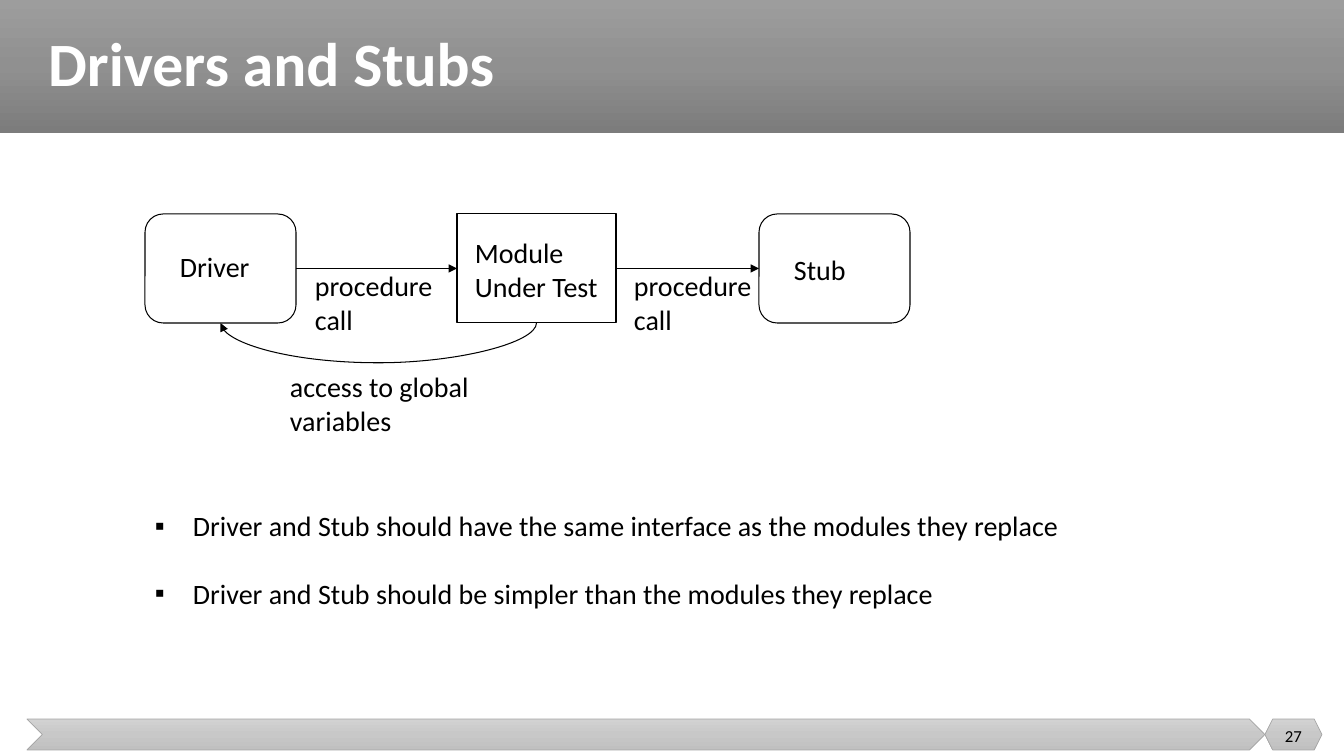
from dataclasses import dataclass

from lxml.etree import SubElement
from pptx import Presentation
from pptx.dml.color import RGBColor
from pptx.enum.shapes import MSO_CONNECTOR, MSO_SHAPE
from pptx.enum.text import MSO_ANCHOR, MSO_AUTO_SIZE, PP_ALIGN
from pptx.oxml.ns import qn
from pptx.util import Emu, Pt

EMU_PER_PX = 914400 / 100.8
BOTTOM, LEFT, RIGHT = 2, 1, 3


def px(length):
    return Emu(round(length * EMU_PER_PX))


@dataclass(frozen=True)
class Theme:
    font: str = "Calibri"
    ink: str = "000000"
    title_ink: str = "FFFFFF"
    band_edge: str = "A5A5A5"
    header: tuple = ("9D9D9D", "909090", "7C7C7C")
    footer: tuple = ("D2D2D2", "C8C8C8", "C0C0C0")
    title_size: int = 44
    body_size: int = 20
    number_size: int = 12
    line_width: float = 0.75
    edge_width: float = 0.5


class SlideBuilder:
    def __init__(self, slide, theme):
        self.slide = slide
        self.theme = theme

    def add_run(self, paragraph, text, size=None, color=None, bold=False):
        run = paragraph.add_run()
        run.text = text
        run.font.name = self.theme.font
        run.font.size = Pt(size or self.theme.body_size)
        run.font.bold = bold
        run.font.color.rgb = RGBColor.from_string(color or self.theme.ink)

    def title(self, text, left, top, width, height, behind):
        """Fill the title placeholder and stack it just above `behind`."""
        title = self.slide.shapes.title
        title.left, title.top = px(left), px(top)
        title.width, title.height = px(width), px(height)
        frame = title.text_frame
        frame.auto_size = MSO_AUTO_SIZE.NONE
        frame.vertical_anchor = MSO_ANCHOR.MIDDLE
        paragraph = frame.paragraphs[0]
        paragraph.alignment = PP_ALIGN.LEFT
        paragraph.line_spacing = 0.9
        self.add_run(paragraph, text, self.theme.title_size, self.theme.title_ink, True)
        behind.element.addnext(title.element)

    def shape(self, kind, left, top, width, height):
        shape = self.slide.shapes.add_shape(kind, px(left), px(top), px(width), px(height))
        shape.shadow.inherit = False
        return shape

    def band(self, kind, left, top, width, height, colors, edge=None):
        """Add a shape with an even vertical gradient."""
        band = self.shape(kind, left, top, width, height)
        band.fill.gradient()
        gradient = band.element.spPr.find(qn("a:gradFill"))
        stops = gradient.find(qn("a:gsLst"))
        for stop in list(stops):
            stops.remove(stop)
        for index, color in enumerate(colors):
            stop = SubElement(stops, qn("a:gs"), pos=str(index * 50000))
            SubElement(stop, qn("a:srgbClr"), val=color)
        gradient.find(qn("a:lin")).set("ang", "5400000")
        if edge:
            band.line.color.rgb = RGBColor.from_string(edge)
            band.line.width = Pt(self.theme.edge_width)
        else:
            band.line.fill.background()
        return band

    def box(self, kind, left, top, width, height):
        box = self.shape(kind, left, top, width, height)
        box.fill.background()
        box.line.color.rgb = RGBColor.from_string(self.theme.ink)
        box.line.width = Pt(self.theme.line_width)
        return box

    def text(self, lines, left, top, width, height, size=None):
        label = self.slide.shapes.add_textbox(px(left), px(top), px(width), px(height))
        frame = label.text_frame
        frame.word_wrap = True
        for index, line in enumerate(lines):
            paragraph = frame.add_paragraph() if index else frame.paragraphs[0]
            self.add_run(paragraph, line, size)
        return frame

    def bullets(self, items, left, top, width, height):
        frame = self.text(items, left, top, width, height)
        for index, paragraph in enumerate(frame.paragraphs):
            if index:
                paragraph.space_before = Pt(24)
            properties = paragraph._p.get_or_add_pPr()
            properties.set("marL", str(px(38)))
            properties.set("indent", str(-px(38)))
            color = SubElement(properties, qn("a:buClr"))
            SubElement(color, qn("a:srgbClr"), val=self.theme.ink)
            SubElement(properties, qn("a:buFont"), typeface="Arial")
            SubElement(properties, qn("a:buChar"), char="▪")

    def arrow(self, source, source_side, target, target_side, kind=MSO_CONNECTOR.STRAIGHT):
        arrow = self.slide.shapes.add_connector(kind, 0, 0, 0, 0)
        arrow.begin_connect(source, source_side)
        arrow.end_connect(target, target_side)
        arrow.line.color.rgb = RGBColor.from_string(self.theme.ink)
        arrow.line.width = Pt(self.theme.line_width)
        outline = arrow.element.spPr.find(qn("a:ln"))
        SubElement(outline, qn("a:tailEnd"), type="triangle")
        SubElement(arrow.element.spPr, qn("a:effectLst"))
        return arrow

    def return_arrow(self, source, target, depth):
        """Curve below both boxes, from bottom to bottom, running leftwards."""
        arrow = self.arrow(source, BOTTOM, target, BOTTOM, MSO_CONNECTOR.CURVE)
        start, end, level = arrow.begin_x, arrow.end_x, arrow.begin_y
        span, thickness = start - end, 1588
        transform = arrow.element.spPr.find(qn("a:xfrm"))
        for flip in ("flipH", "flipV"):
            transform.attrib.pop(flip, None)
        transform.set("rot", "5400000")
        arrow.left = Emu((start + end - thickness) // 2)
        arrow.top = Emu(level - span // 2)
        arrow.width, arrow.height = Emu(thickness), Emu(span)
        adjustments = arrow.element.spPr.find(qn("a:prstGeom")).find(qn("a:avLst"))
        bend = round(px(depth) / thickness * 100000)
        SubElement(adjustments, qn("a:gd"), name="adj1", fmla=f"val {bend}")


def main():
    presentation = Presentation()
    presentation.slide_width, presentation.slide_height = px(1344), px(756)
    slide = presentation.slides.add_slide(presentation.slide_layouts[5])
    theme = Theme()
    builder = SlideBuilder(slide, theme)

    header = builder.band(MSO_SHAPE.RECTANGLE, 0, 0, 1344, 133, theme.header)
    builder.title("Drivers and Stubs", 38, 0, 1284, 133, header)
    for kind, left, width in ((MSO_SHAPE.CHEVRON, 27, 1238), (MSO_SHAPE.HEXAGON, 1265, 57)):
        builder.band(kind, left, 719, width, 31, theme.footer, theme.band_edge)

    driver, module, stub = (
        builder.box(kind, left, 214, width, 109)
        for kind, left, width in (
            (MSO_SHAPE.ROUNDED_RECTANGLE, 145, 151),
            (MSO_SHAPE.RECTANGLE, 457, 159),
            (MSO_SHAPE.ROUNDED_RECTANGLE, 759, 151),
        )
    )
    builder.arrow(driver, RIGHT, module, LEFT)
    builder.arrow(module, RIGHT, stub, LEFT)
    builder.return_arrow(module, driver, 44)

    builder.text(["Driver"], 170, 245, 94, 43)
    builder.text(["Module", "Under Test"], 465, 231, 150, 78)
    builder.text(["Stub"], 784, 248, 93, 43)
    for call_left in (305, 624):
        builder.text(["procedure", "call"], call_left, 264, 144, 78)
    builder.text(["access to global", "variables"], 280, 365, 210, 78)

    builder.bullets(
        [
            "Driver and Stub should have the same interface as the modules they replace",
            "Driver and Stub should be simpler than the modules they replace",
        ],
        145, 504, 1011, 112,
    )
    page_number = builder.text(["27"], 1265, 716, 57, 40, theme.number_size)
    page_number.vertical_anchor = MSO_ANCHOR.MIDDLE
    page_number.paragraphs[0].alignment = PP_ALIGN.CENTER

    presentation.save("out.pptx")


if __name__ == "__main__":
    main()
